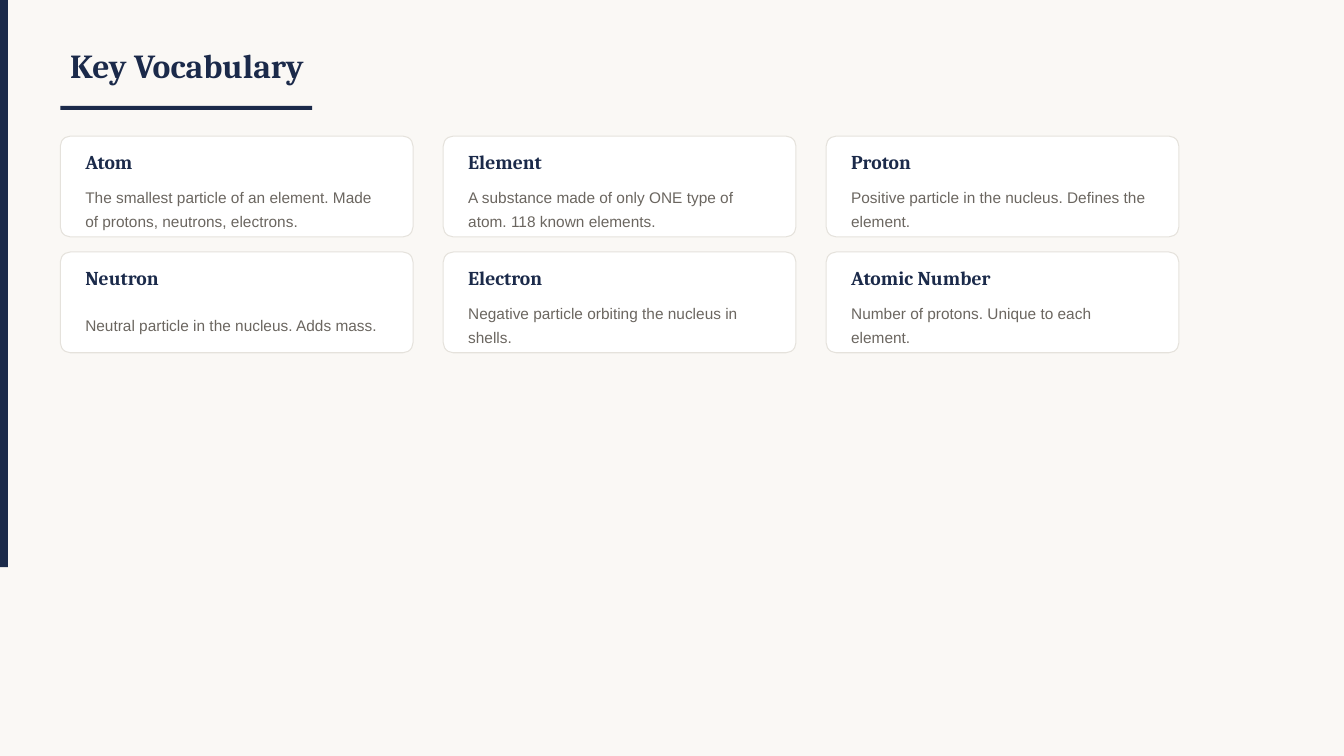
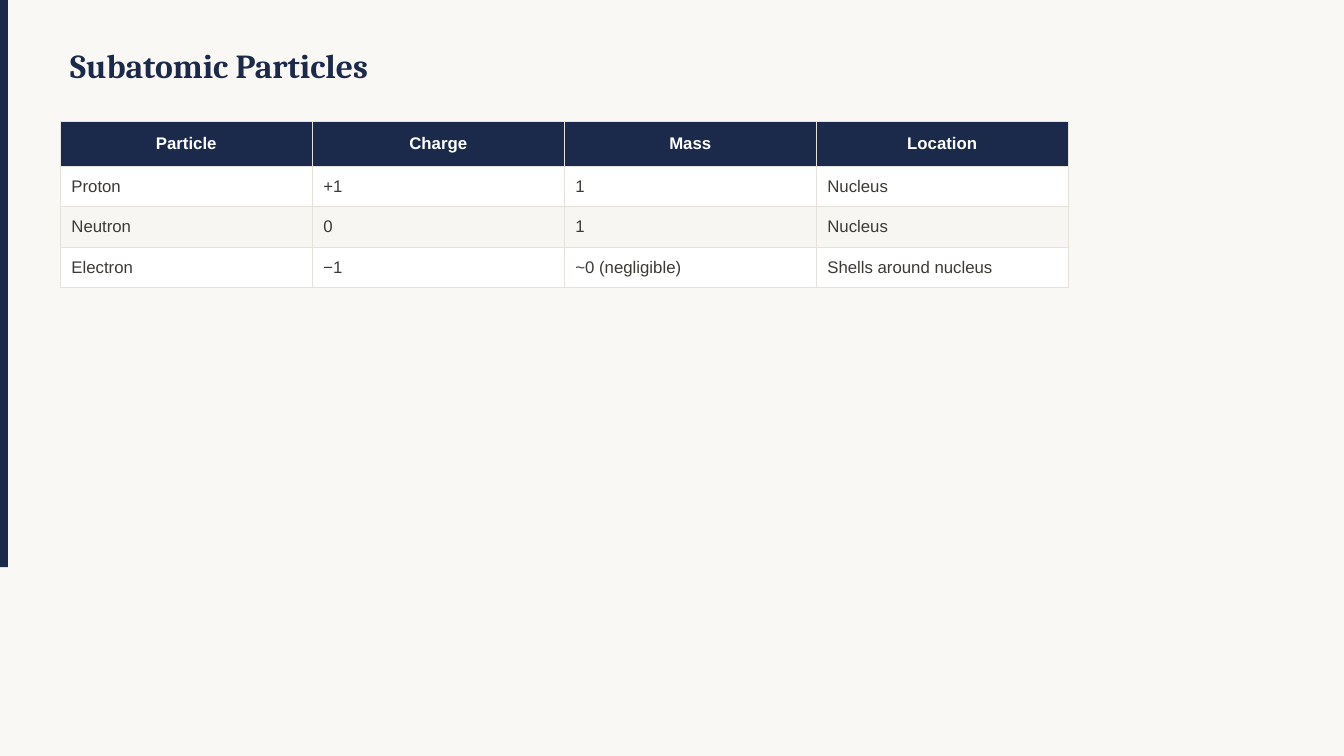
import pptx
import pptx.dml.color
import pptx.enum.shapes
import pptx.enum.text
import pptx.oxml
import pptx.oxml.ns
import pptx.util

Cm = pptx.util.Cm
Pt = pptx.util.Pt
RGBColor = pptx.dml.color.RGBColor
Shape = pptx.enum.shapes.MSO_SHAPE
Align = pptx.enum.text.PP_ALIGN
MIDDLE = pptx.enum.text.MSO_ANCHOR.MIDDLE

NAVY = RGBColor(0x1B, 0x2A, 0x4A)
CREAM = RGBColor(0xFA, 0xF8, 0xF5)
WHITE = RGBColor(0xFF, 0xFF, 0xFF)
STRIPE = RGBColor(0xF8, 0xF6, 0xF3)
BORDER = RGBColor(0xE5, 0xE2, 0xDC)
GREY = RGBColor(0x6B, 0x66, 0x60)
INK = RGBColor(0x3D, 0x3A, 0x36)

VOCABULARY_TITLE = "Key Vocabulary"
VOCABULARY = [
    ("Atom", "The smallest particle of an element. Made of protons, neutrons, electrons."),
    ("Element", "A substance made of only ONE type of atom. 118 known elements."),
    ("Proton", "Positive particle in the nucleus. Defines the element."),
    ("Neutron", "Neutral particle in the nucleus. Adds mass."),
    ("Electron", "Negative particle orbiting the nucleus in shells."),
    ("Atomic Number", "Number of protons. Unique to each element."),
]
PARTICLES_TITLE = "Subatomic Particles"
PARTICLES = [
    ("Particle", "Charge", "Mass", "Location"),
    ("Proton", "+1", "1", "Nucleus"),
    ("Neutron", "0", "1", "Nucleus"),
    ("Electron", "−1", "~0 (negligible)", "Shells around nucleus"),
]

TITLE_FONT = {"name": "Cambria", "size": Pt(24), "bold": True}
TERM_FONT = {"name": "Cambria", "size": Pt(14), "bold": True}
MEANING_FONT = {"name": "Arial", "size": Pt(11), "bold": False}
HEADER_FONT = {"name": "Arial", "size": Pt(12), "bold": True}
CELL_FONT = {"name": "Arial", "size": Pt(12), "bold": False}
CELL_MARGINS = {
    "margin_left": Cm(0.28),
    "margin_right": Cm(0.28),
    "margin_top": Cm(0.15),
    "margin_bottom": Cm(0.15),
}

LEFT = Cm(1.52)
CONTENT_WIDTH = Cm(25.4)
CARD_COLUMNS = 3
CARD_TOP = Cm(3.43)
CARD_WIDTH, CARD_HEIGHT = Cm(8.89), Cm(2.54)
CARD_GAP_X, CARD_GAP_Y = Cm(0.76), Cm(0.38)
CARD_PADDING = Cm(0.38)
TABLE_TOP = Cm(3.05)
HEADER_HEIGHT, ROW_HEIGHT = Cm(1.14), Cm(1.02)


def set_attributes(target, values):
    for name, value in values.items():
        setattr(target, name, value)


def write(text_frame, text, font, color, **paragraph_format):
    paragraph = text_frame.paragraphs[0]
    set_attributes(paragraph, paragraph_format)
    run = paragraph.add_run()
    run.text = text
    set_attributes(run.font, font)
    run.font.color.rgb = color


def add_text(slide, box, text, font, color, **paragraph_format):
    text_frame = slide.shapes.add_textbox(*box).text_frame
    set_attributes(text_frame, {"word_wrap": True, "vertical_anchor": MIDDLE})
    write(text_frame, text, font, color, **paragraph_format)


def add_block(slide, kind, box, fill, line=None):
    shape = slide.shapes.add_shape(kind, *box)
    shape.shadow.inherit = False
    shape.fill.solid()
    shape.fill.fore_color.rgb = fill
    if line is None:
        shape.line.fill.background()
    else:
        shape.line.color.rgb = line
        shape.line.width = Pt(0.75)
    return shape


def add_titled_slide(presentation, title):
    slide = presentation.slides.add_slide(presentation.slide_layouts[6])
    add_block(slide, Shape.RECTANGLE, (0, 0, Cm(0.2), Cm(14.29)), NAVY)
    add_text(slide, (LEFT, Cm(0.76), CONTENT_WIDTH, Cm(1.78)), title, TITLE_FONT, NAVY)
    return slide


def add_card(slide, left, top, term, meaning):
    box = (left, top, CARD_WIDTH, CARD_HEIGHT)
    card = add_block(slide, Shape.ROUNDED_RECTANGLE, box, WHITE, BORDER)
    card.adjustments[0] = 0.1
    text_left = left + CARD_PADDING
    text_width = CARD_WIDTH - 2 * CARD_PADDING
    add_text(slide, (text_left, top + Cm(0.2), text_width, Cm(0.89)), term, TERM_FONT, NAVY)
    add_text(slide, (text_left, top + Cm(1.14), text_width, Cm(1.27)), meaning,
             MEANING_FONT, GREY, line_spacing=1.3)


def add_borders(cell):
    properties = cell._tc.get_or_add_tcPr()
    for side in ("lnL", "lnR", "lnT", "lnB"):
        properties.append(pptx.oxml.parse_xml(
            f'<a:{side} {pptx.oxml.ns.nsdecls("a")} w="{Pt(0.5)}">'
            f'<a:solidFill><a:srgbClr val="{BORDER}"/></a:solidFill></a:{side}>'))


def build_vocabulary(presentation):
    slide = add_titled_slide(presentation, VOCABULARY_TITLE)
    add_block(slide, Shape.RECTANGLE, (LEFT, Cm(2.67), Cm(6.35), Cm(0.1)), NAVY)
    for index, (term, meaning) in enumerate(VOCABULARY):
        row, column = divmod(index, CARD_COLUMNS)
        left = LEFT + column * (CARD_WIDTH + CARD_GAP_X)
        top = CARD_TOP + row * (CARD_HEIGHT + CARD_GAP_Y)
        add_card(slide, left, top, term, meaning)


def build_particles(presentation):
    slide = add_titled_slide(presentation, PARTICLES_TITLE)
    heights = [HEADER_HEIGHT] + [ROW_HEIGHT] * (len(PARTICLES) - 1)
    table = slide.shapes.add_table(len(PARTICLES), len(PARTICLES[0]), LEFT, TABLE_TOP,
                                   CONTENT_WIDTH, sum(heights)).table
    for row_index, (values, height) in enumerate(zip(PARTICLES, heights)):
        table.rows[row_index].height = height
        if row_index == 0:
            fill, font, color, alignment = NAVY, HEADER_FONT, WHITE, Align.CENTER
        else:
            fill = WHITE if row_index % 2 else STRIPE
            font, color, alignment = CELL_FONT, INK, Align.LEFT
        for column_index, value in enumerate(values):
            cell = table.cell(row_index, column_index)
            add_borders(cell)
            cell.fill.solid()
            cell.fill.fore_color.rgb = fill
            set_attributes(cell, {"vertical_anchor": MIDDLE, **CELL_MARGINS})
            write(cell.text_frame, value, font, color, alignment=alignment)


def main():
    presentation = pptx.Presentation()
    set_attributes(presentation, {"slide_width": Cm(33.87), "slide_height": Cm(19.05)})
    background = presentation.slide_master.background.fill
    background.solid()
    background.fore_color.rgb = CREAM
    build_vocabulary(presentation)
    build_particles(presentation)
    presentation.save("out.pptx")


if __name__ == "__main__":
    main()
